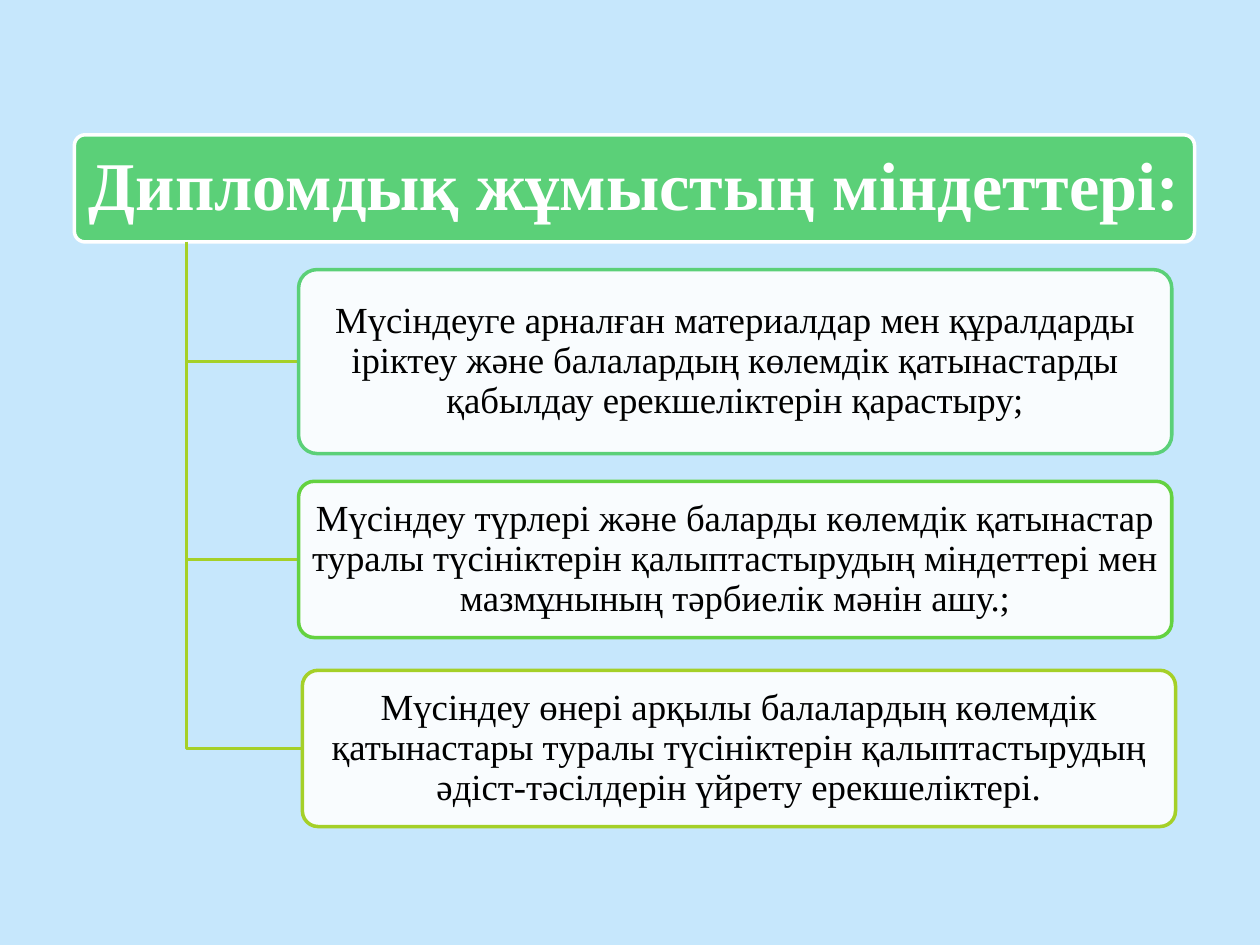
from dataclasses import dataclass

from lxml import etree
from pptx import Presentation, util as u
from pptx.dml.color import RGBColor
from pptx.enum import shapes, text
from pptx.oxml.ns import qn


@dataclass(frozen=True)
class Theme:
    font: str = "Times New Roman"
    background: str = "C6E7FC"
    white: str = "FFFFFF"
    black: str = "000000"
    emerald: str = "5BD078"
    green: str = "64D240"
    lime: str = "A5D028"
    title_size: int = 39
    body_size: int = 21
    line_width: int = 2
    card_opacity: int = 90


THEME = Theme()
TITLE = "Дипломдық жұмыстың міндеттері:"
TITLE_BOX = (0.59, 1.07, 8.89, 0.85)
TRUNK_X = 1.48
CARD_WIDTH = 6.93
# left, top, height, outline colour, wording
TASKS = [
    (2.37, 2.14, 1.46, THEME.emerald,
     "Мүсіндеуге арналған материалдар мен құралдарды іріктеу және балалардың "
     "көлемдік қатынастарды қабылдау ерекшеліктерін қарастыру;"),
    (2.37, 3.82, 1.24, THEME.green,
     "Мүсіндеу түрлері және баларды көлемдік қатынастар туралы түсініктерін "
     "қалыптастырудың міндеттері мен мазмұнының тәрбиелік мәнін ашу.;"),
    (2.40, 5.32, 1.24, THEME.lime,
     "Мүсіндеу өнері арқылы балалардың көлемдік қатынастары туралы түсініктерін "
     "қалыптастырудың әдіст-тәсілдерін үйрету ерекшеліктері."),
]


def rgb(value):
    return RGBColor.from_string(value)


def set_line(sp, color):
    sp.shadow.inherit = False
    sp.line.color.rgb = rgb(color)
    sp.line.width = u.Pt(THEME.line_width)


def set_text(sp, wording, *, size, color, bold=False, inset=(0.04, 0.03)):
    tf = sp.text_frame
    tf.word_wrap = True
    tf.vertical_anchor = text.MSO_ANCHOR.MIDDLE
    tf.margin_left = tf.margin_right = u.Inches(inset[0])
    tf.margin_top = tf.margin_bottom = u.Inches(inset[1])
    p = tf.paragraphs[0]
    p.alignment = text.PP_ALIGN.CENTER
    p.line_spacing = 0.9
    r = p.add_run()
    r.text = wording
    r.font.name = THEME.font
    r.font.size = u.Pt(size)
    r.font.bold = bold
    r.font.color.rgb = rgb(color)


def add_box(s, box, fill, line, opacity=100):
    sp = s.shapes.add_shape(shapes.MSO_SHAPE.ROUNDED_RECTANGLE,
                            *map(u.Inches, box))
    sp.adjustments[0] = 0.1
    sp.fill.solid()
    sp.fill.fore_color.rgb = rgb(fill)
    if opacity < 100:
        color = sp.fill._xPr.find(qn("a:solidFill"))[0]
        etree.SubElement(color, qn("a:alpha"), val=str(opacity * 1000))
    set_line(sp, line)
    return sp


def add_branch(s, top, right, bottom):
    """Draw an elbow from the title down the trunk and across to a card."""
    start, *rest = [(u.Inches(x), u.Inches(y)) for x, y in
                    ((TRUNK_X, top), (TRUNK_X, bottom), (right, bottom))]
    builder = s.shapes.build_freeform(*start)
    builder.add_line_segments(rest, close=False)
    sp = builder.convert_to_shape()
    sp.fill.background()
    set_line(sp, THEME.lime)


def main():
    prs = Presentation()
    prs.slide_width, prs.slide_height = u.Inches(10), u.Inches(7.5)
    s = prs.slides.add_slide(prs.slide_layouts[6])
    s.background.fill.solid()
    s.background.fill.fore_color.rgb = rgb(THEME.background)

    title = add_box(s, TITLE_BOX, THEME.emerald, THEME.white)
    set_text(title, TITLE, size=THEME.title_size, color=THEME.white,
             bold=True, inset=(0.08, 0.05))

    title_bottom = TITLE_BOX[1] + TITLE_BOX[3]
    for left, top, height, outline, wording in TASKS:
        add_branch(s, title_bottom, left, top + height / 2)
        card = add_box(s, (left, top, CARD_WIDTH, height), THEME.white,
                       outline, THEME.card_opacity)
        set_text(card, wording, size=THEME.body_size, color=THEME.black)

    prs.save("out.pptx")


if __name__ == "__main__":
    main()
